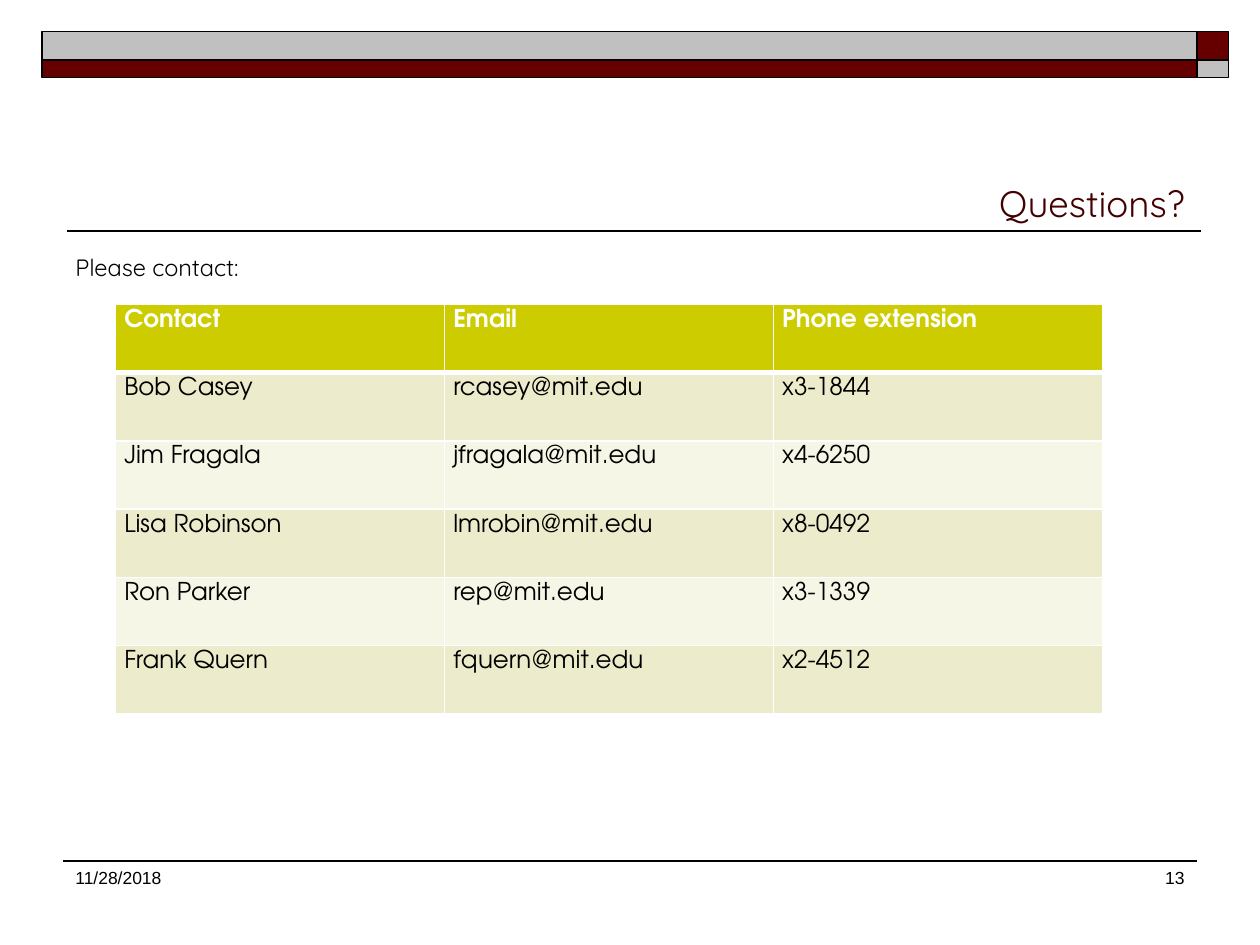
from dataclasses import dataclass

from lxml.etree import SubElement
from pptx import Presentation
from pptx.dml.color import RGBColor as Rgb
from pptx.enum.shapes import MSO_CONNECTOR as Connector, MSO_SHAPE as Shape
from pptx.enum.text import MSO_ANCHOR as Anchor, PP_ALIGN as Align
from pptx.oxml import parse_xml
from pptx.oxml.ns import nsdecls, qn
from pptx.util import Inches, Pt

UNIT = Inches(1) / 12
COLUMNS, ROWS = 120, 90

CONTACTS = [
    ("Contact", "Email", "Phone extension"),
    ("Bob Casey", "rcasey@mit.edu", "x3-1844"),
    ("Jim Fragala", "jfragala@mit.edu", "x4-6250"),
    ("Lisa Robinson", "lmrobin@mit.edu", "x8-0492"),
    ("Ron Parker", "rep@mit.edu", "x3-1339"),
    ("Frank Quern", "fquern@mit.edu", "x2-4512"),
]


@dataclass(frozen=True)
class Theme:
    black: str = "000000"
    white: str = "FFFFFF"
    maroon: str = "660000"
    silver: str = "C0C0C0"
    title: str = "420000"
    header: str = "CCCC00"
    bands: tuple = ("ECECCC", "F6F6E7")
    display_font: str = "Quicksand"
    table_font: str = "TeX Gyre Adventor"
    footer_font: str = "Arial"
    title_size: float = 21
    intro_size: float = 13.5
    table_size: float = 14
    footer_size: float = 10


@dataclass(frozen=True)
class Box:
    left: float
    top: float
    width: float
    height: float

    def emu(self):
        return [round(v * UNIT) for v in (self.left, self.top, self.width, self.height)]


THEME = Theme()


def style_text(paragraph, text, color, **font_format):
    paragraph.text = text
    for key, value in font_format.items():
        setattr(paragraph.font, key, value)
    paragraph.font.color.rgb = Rgb.from_string(color)


def add_text(slide, box, text, color, font, size, align=Align.LEFT, anchor=Anchor.TOP):
    frame = slide.shapes.add_textbox(*box.emu()).text_frame
    frame.word_wrap = True
    frame.vertical_anchor = anchor
    paragraph = frame.paragraphs[0]
    paragraph.alignment = align
    style_text(paragraph, text, color, name=font, size=Pt(size))
    return paragraph


def add_rule(slide, left, top, width, weight):
    x, y, length, _ = Box(left, top, width, 0).emu()
    rule = slide.shapes.add_connector(Connector.STRAIGHT, x, y, x + length, y)
    rule.line.color.rgb = Rgb.from_string(THEME.black)
    rule.line.width = Pt(weight)
    SubElement(rule._element.spPr, qn("a:effectLst"))


def add_banner(slide, box):
    corner = 3
    upper = box.height * 0.62
    columns = [(box.left, box.width - corner), (box.left + box.width - corner, corner)]
    rows = [(box.top, upper), (box.top + upper, box.height - upper)]
    for r, (top, height) in enumerate(rows):
        for c, (left, width) in enumerate(columns):
            block = slide.shapes.add_shape(Shape.RECTANGLE, *Box(left, top, width, height).emu())
            block.shadow.inherit = False
            block.fill.solid()
            block.fill.fore_color.rgb = Rgb.from_string((THEME.silver, THEME.maroon)[(r + c) % 2])
            block.line.color.rgb = Rgb.from_string(THEME.black)
            block.line.width = Pt(1)


def add_title(slide, box):
    add_rule(slide, box.left + 0.4, box.top + box.height, box.width, 1)
    add_text(slide, box, "Questions?", THEME.title, THEME.display_font,
             THEME.title_size, Align.RIGHT, Anchor.BOTTOM)


def add_intro(slide, box):
    intro = add_text(slide, box, "Please contact:", THEME.black,
                     THEME.display_font, THEME.intro_size)
    intro.line_spacing = 0.8


def set_borders(cell, weights):
    properties = cell._tc.get_or_add_tcPr()
    for index, (side, weight) in enumerate(weights.items()):
        properties.insert(index, parse_xml(
            f'<a:ln{side} {nsdecls("a")} w="{Pt(weight)}"><a:solidFill>'
            f'<a:srgbClr val="{THEME.white}"/></a:solidFill></a:ln{side}>'))


def add_contacts(slide, box):
    table = slide.shapes.add_table(len(CONTACTS), len(CONTACTS[0]), *box.emu()).table
    cell_format = dict(margin_left=Inches(0.07), margin_right=Inches(0.07),
                       margin_top=Inches(0.04), margin_bottom=Inches(0.04))
    for r, contact in enumerate(CONTACTS):
        is_header = r == 0
        fill = THEME.header if is_header else THEME.bands[(r - 1) % 2]
        borders = {"L": 1, "R": 1, "T": 3 if r == 1 else 1, "B": 3 if is_header else 1}
        for c, value in enumerate(contact):
            cell = table.cell(r, c)
            for key, setting in cell_format.items():
                setattr(cell, key, setting)
            cell.fill.solid()
            cell.fill.fore_color.rgb = Rgb.from_string(fill)
            set_borders(cell, borders)
            style_text(cell.text_frame.paragraphs[0], value,
                       THEME.white if is_header else THEME.black,
                       name=THEME.table_font, size=Pt(THEME.table_size), bold=is_header)


def add_footer(slide, box):
    add_rule(slide, box.left, box.top, box.width, 0.75)
    date_width, number_width = 22, 25
    number_left = box.left + box.width - number_width
    for left, width, text, align in [
        (box.left, date_width, "11/28/2018", Align.LEFT),
        (number_left, number_width, "13", Align.RIGHT),
    ]:
        add_text(slide, Box(left, box.top, width, box.height), text, THEME.black,
                 THEME.footer_font, THEME.footer_size, align)


def main():
    deck = Presentation()
    deck.slide_width = round(COLUMNS * UNIT)
    deck.slide_height = round(ROWS * UNIT)
    slide = deck.slides.add_slide(deck.slide_layouts[6])
    add_banner(slide, Box(4, 3, 113, 4.4))
    add_title(slide, Box(6, 7, 108, 15))
    add_intro(slide, Box(6, 24, 108, 56.4))
    add_contacts(slide, Box(11, 29, 94, 39))
    add_footer(slide, Box(6, 82, 108, 6))
    deck.save("out.pptx")


if __name__ == "__main__":
    main()
